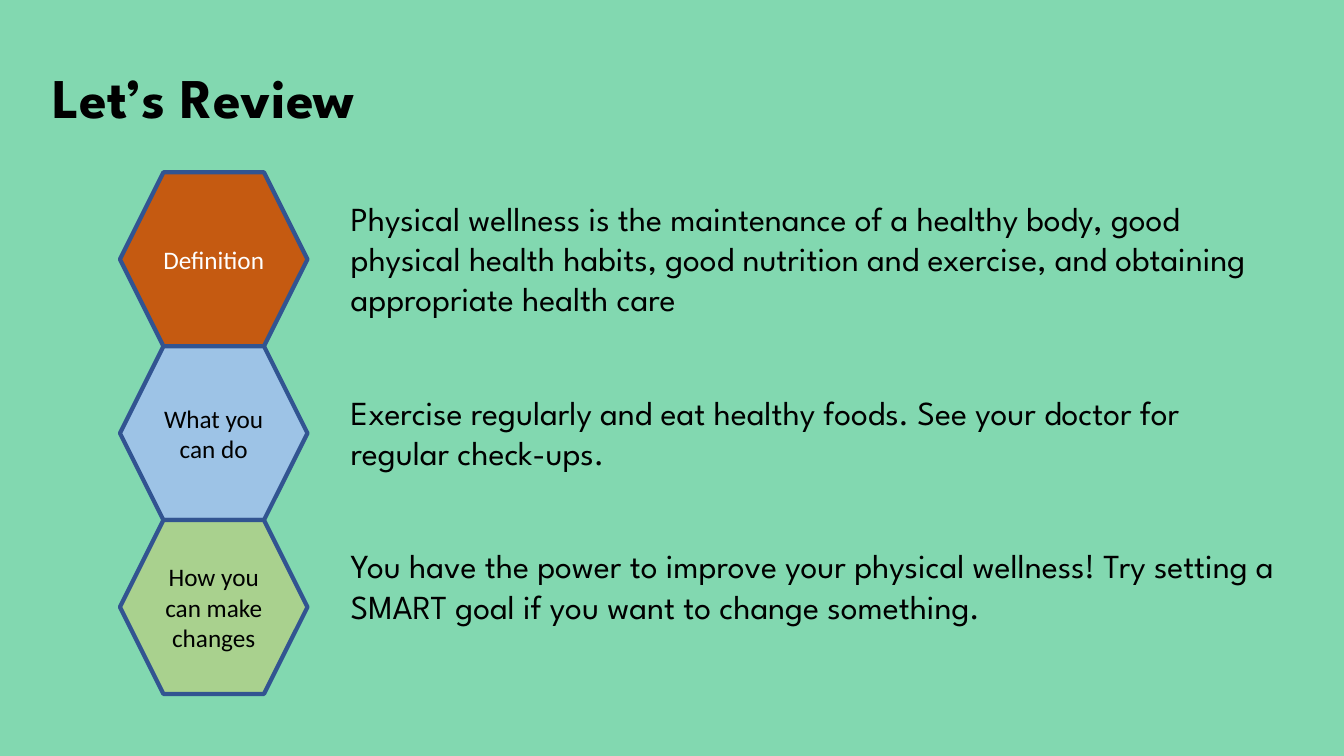
from dataclasses import dataclass

from pptx import Presentation
from pptx.dml.color import RGBColor
from pptx.enum.shapes import MSO_SHAPE
from pptx.enum.text import MSO_ANCHOR, MSO_AUTO_SIZE, PP_ALIGN
from pptx.slide import Slide
from pptx.text.text import TextFrame
from pptx.util import Inches, Pt

COLORS = {
    "background": "82D8B0",
    "orange": "C55A11",
    "blue": "9DC3E6",
    "green": "A9D18E",
    "outline": "325491",
    "black": "000000",
    "white": "FFFFFF",
}
HEADING_FONT = "League Spartan"
LABEL_FONT = "Calibri"

HEX_LEFT, HEX_TOP = 1.19, 1.71
HEX_WIDTH, HEX_HEIGHT = 1.86, 1.725
TEXT_LEFT, TEXT_WIDTH = 3.38, 9.47


@dataclass
class ReviewPoint:
    label: str
    fill: str
    label_color: str
    text: str
    text_top: float
    text_height: float


POINTS = [
    ReviewPoint("Definition", "orange", "white",
                "Physical wellness is the maintenance of a healthy body, good physical "
                "health habits, good nutrition and exercise, and obtaining appropriate "
                "health care", 1.91, 1.31),
    ReviewPoint("What you can do", "blue", "black",
                "Exercise regularly and eat healthy foods. See your doctor for regular "
                "check-ups.", 3.84, 0.91),
    ReviewPoint("How you can make changes", "green", "black",
                "You have the power to improve your physical wellness! Try setting a "
                "SMART goal if you want to change something.", 5.36, 1.31),
]


def rgb(name: str) -> RGBColor:
    return RGBColor.from_string(COLORS[name])


def write(tf: TextFrame, text: str, *, size: float, font: str = HEADING_FONT,
          color: str = "black", bold: bool = False,
          align: PP_ALIGN = PP_ALIGN.LEFT,
          anchor: MSO_ANCHOR = MSO_ANCHOR.TOP) -> None:
    tf.word_wrap = True
    tf.auto_size = MSO_AUTO_SIZE.NONE
    tf.vertical_anchor = anchor
    p = tf.paragraphs[0]
    p.alignment = align
    r = p.add_run()
    r.text = text
    r.font.name = font
    r.font.size = Pt(size)
    r.font.bold = bold
    r.font.color.rgb = rgb(color)


def add_title(s: Slide, text: str) -> None:
    title = s.shapes.title
    title.left, title.top = Inches(0.42), Inches(0.57)
    title.width, title.height = Inches(11.56), Inches(0.77)
    write(title.text_frame, text, size=40, bold=True)


def add_hexagon(s: Slide, point: ReviewPoint, row: int) -> None:
    sp = s.shapes.add_shape(MSO_SHAPE.HEXAGON, Inches(HEX_LEFT),
                            Inches(HEX_TOP + row * HEX_HEIGHT),
                            Inches(HEX_WIDTH), Inches(HEX_HEIGHT))
    sp.shadow.inherit = False
    sp.fill.solid()
    sp.fill.fore_color.rgb = rgb(point.fill)
    sp.line.color.rgb = rgb("outline")
    sp.line.width = Pt(3)
    write(sp.text_frame, point.label, size=18, font=LABEL_FONT,
          color=point.label_color, align=PP_ALIGN.CENTER, anchor=MSO_ANCHOR.MIDDLE)


def add_description(s: Slide, point: ReviewPoint) -> None:
    box = s.shapes.add_textbox(Inches(TEXT_LEFT), Inches(point.text_top),
                               Inches(TEXT_WIDTH), Inches(point.text_height))
    write(box.text_frame, point.text, size=24)


def main() -> None:
    prs = Presentation()
    prs.slide_width, prs.slide_height = Inches(13.33), Inches(7.5)
    s = prs.slides.add_slide(prs.slide_layouts.get_by_name("Title Only"))
    s.background.fill.solid()
    s.background.fill.fore_color.rgb = rgb("background")

    add_title(s, "Let’s Review")
    for row, point in enumerate(POINTS):
        add_hexagon(s, point, row)
        add_description(s, point)
    prs.save("out.pptx")


if __name__ == "__main__":
    main()
